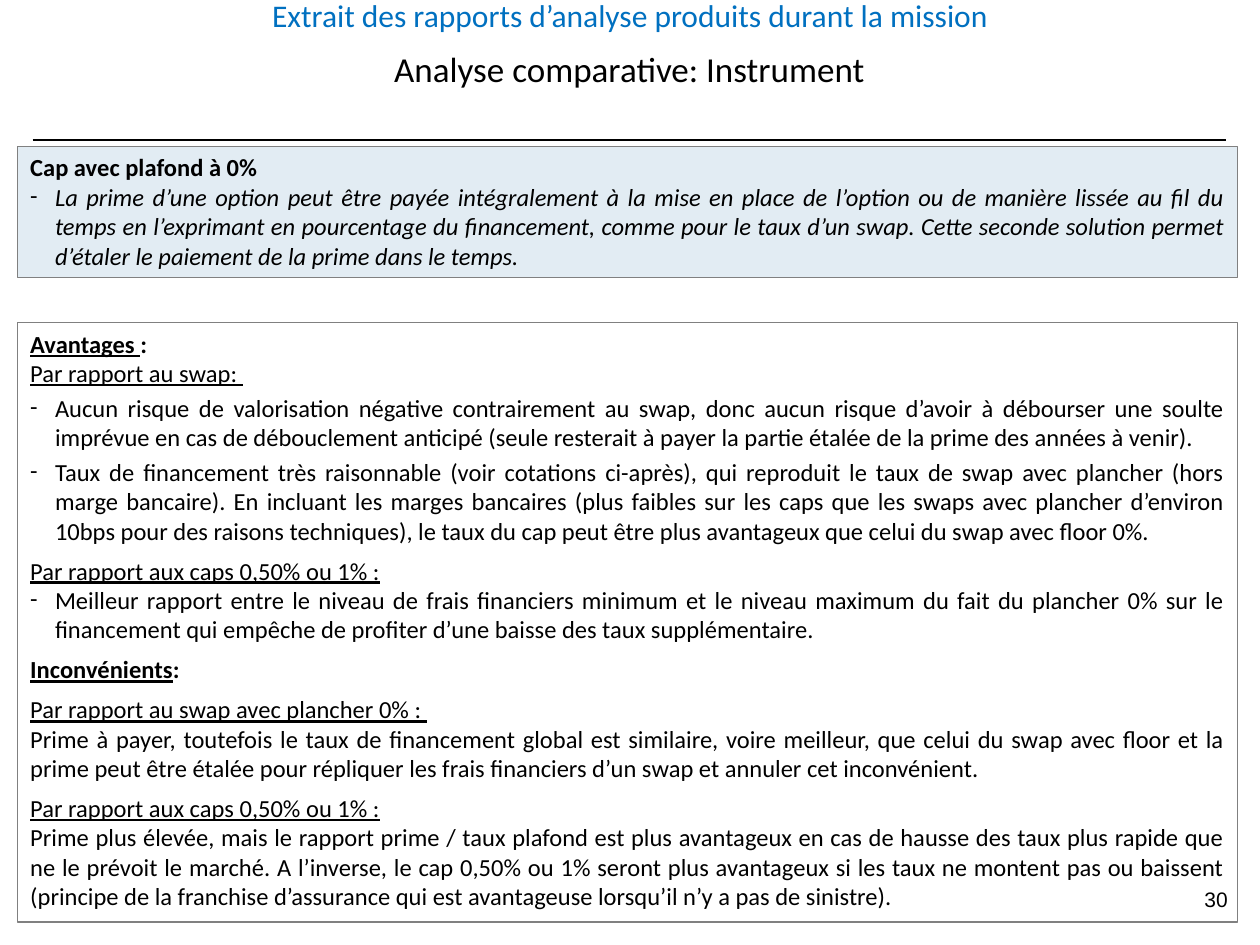
from lxml import etree
from pptx import Presentation
from pptx.dml.color import RGBColor
from pptx.enum.shapes import MSO_CONNECTOR, MSO_SHAPE
from pptx.enum.text import MSO_ANCHOR, PP_ALIGN
from pptx.oxml.ns import qn
from pptx.util import Cm, Pt

LINE, RECT = MSO_CONNECTOR.STRAIGHT, MSO_SHAPE.RECTANGLE
TOP = MSO_ANCHOR.TOP
CENTER, RIGHT, FULL = PP_ALIGN.CENTER, PP_ALIGN.RIGHT, PP_ALIGN.JUSTIFY


def color(code):
    return RGBColor.from_string(code)


class Page:
    font = "Calibri"
    ink = "000000"
    edge = "808080"
    size = 14
    indent = 0.5

    def __init__(self, deck):
        self.slide = deck.slides.add_slide(deck.slide_layouts[5])
        self.shapes = self.slide.shapes

    def format(self, font, size, ink=None, name=None):
        font.name = name or self.font
        font.size = Pt(size)
        font.color.rgb = color(ink or self.ink)

    def fill_text(self, shape, text, size, align, ink=None, name=None):
        frame = shape.text_frame
        frame.word_wrap = True
        frame.vertical_anchor = TOP
        frame.text = text
        para = frame.paragraphs[0]
        para.alignment = align
        self.format(para.runs[0].font, size, ink, name)

    def title(self, text, size, x, y, w, h):
        shape = self.shapes.title
        shape.left, shape.top, shape.width, shape.height = map(Cm, (x, y, w, h))
        self.fill_text(shape, text, size, CENTER)

    def label(self, text, size, align, x, y, w, h, ink=None, name=None):
        shape = self.shapes.add_textbox(*map(Cm, (x, y, w, h)))
        self.fill_text(shape, text, size, align, ink, name)

    def rule(self, x1, y1, x2, y2):
        line = self.shapes.add_connector(LINE, *map(Cm, (x1, y1, x2, y2)))
        line.line.color.rgb = color(self.ink)
        line.line.width = Pt(0.75)
        etree.SubElement(line._element.spPr, qn("a:effectLst"))

    def bullet(self, para):
        props = para._p.get_or_add_pPr()
        props.set("marL", str(Cm(self.indent)))
        props.set("indent", str(-Cm(self.indent)))
        etree.SubElement(props, qn("a:buFont"), typeface=self.font)
        etree.SubElement(props, qn("a:buChar"), char="-")

    def panel(self, x, y, w, h, paras, fill=None):
        """Each paragraph is (space before, bulleted, [(text, style)])."""
        shape = self.shapes.add_shape(RECT, *map(Cm, (x, y, w, h)))
        shape.shadow.inherit = False
        shape.line.color.rgb = color(self.edge)
        shape.line.width = Pt(0.75)
        if fill:
            shape.fill.solid()
            shape.fill.fore_color.rgb = color(fill)
        else:
            shape.fill.background()
        frame = shape.text_frame
        frame.word_wrap = True
        frame.vertical_anchor = TOP
        for i, (gap, item, runs) in enumerate(paras):
            para = frame.add_paragraph() if i else frame.paragraphs[0]
            para.alignment = FULL
            para.space_before = Pt(gap)
            if item:
                self.bullet(para)
            for text, style in runs:
                run = para.add_run()
                run.text = text
                self.format(run.font, self.size)
                run.font.bold = "b" in style
                run.font.italic = "i" in style
                run.font.underline = "u" in style


CAP = [
    (0, False, [("Cap avec plafond à 0%", "b")]),
    (0, True, [("La prime d’une option peut être payée intégralement à la mise en "
                "place de l’option ou de manière lissée au fil du temps en "
                "l’exprimant en pourcentage du financement, comme pour le taux "
                "d’un swap. Cette seconde solution permet d’étaler le paiement "
                "de la prime dans le temps.", "i")]),
]

VERSUS = (6, False, [("Par rapport aux caps 0,50% ou 1% :", "u")])

REVIEW = [
    # Advantages
    (0, False, [("Avantages ", "bu"), (":", "b")]),
    (0, False, [("Par rapport au swap: ", "u")]),
    (3, True, [("Aucun risque de valorisation négative contrairement au swap, donc "
                "aucun risque d’avoir à débourser une soulte imprévue en cas de "
                "débouclement anticipé (seule resterait à payer la partie étalée "
                "de la prime des années à venir).", "")]),
    (3, True, [("Taux de financement très raisonnable (voir cotations ci-après), "
                "qui reproduit le taux de swap avec plancher (hors marge "
                "bancaire). En incluant les marges bancaires (plus faibles sur "
                "les caps que les swaps avec plancher d’environ 10bps pour des "
                "raisons techniques), le taux du cap peut être plus avantageux "
                "que celui du swap avec floor 0%.", "")]),
    VERSUS,
    (0, True, [("Meilleur rapport entre le niveau de frais financiers minimum et "
                "le niveau maximum du fait du plancher 0% sur le financement qui "
                "empêche de profiter d’une baisse des taux supplémentaire.", "")]),
    # Drawbacks
    (6, False, [("Inconvénients", "bu"), (":", "b")]),
    (6, False, [("Par rapport au swap avec plancher 0% : ", "u")]),
    (0, False, [("Prime à payer, toutefois le taux de financement global est "
                 "similaire, voire meilleur, que celui du swap avec floor et la "
                 "prime peut être étalée pour répliquer les frais financiers d’un "
                 "swap et annuler cet inconvénient.", "")]),
    VERSUS,
    (0, False, [("Prime plus élevée, mais le rapport prime / taux plafond est plus "
                 "avantageux en cas de hausse des taux plus rapide que ne le "
                 "prévoit le marché. A l’inverse, le cap 0,50% ou 1% seront plus "
                 "avantageux si les taux ne montent pas ou baissent (principe de "
                 "la franchise d’assurance qui est avantageuse lorsqu’il n’y a "
                 "pas de sinistre).", "")]),
]


def main():
    deck = Presentation()
    deck.slide_width, deck.slide_height = Cm(25.4), Cm(19.05)
    page = Page(deck)

    # Header
    page.title("Analyse comparative: Instrument", 20, 4.32, 0.84, 16.74, 1.12)
    page.label("Extrait des rapports d’analyse produits durant la mission", 18,
               CENTER, 4.78, -0.2, 15.85, 1.02, ink="0070C0")
    page.rule(0.66, 2.82, 24.71, 2.82)

    # Panels
    page.panel(0.36, 2.95, 24.59, 2.64, CAP, fill="E2ECF3")
    page.panel(0.36, 6.5, 24.59, 12.09, REVIEW)

    # Page number
    page.label("30", 12, RIGHT, 19.08, 17.75, 5.92, 0.91, name="Arial")

    deck.save("out.pptx")


if __name__ == "__main__":
    main()
